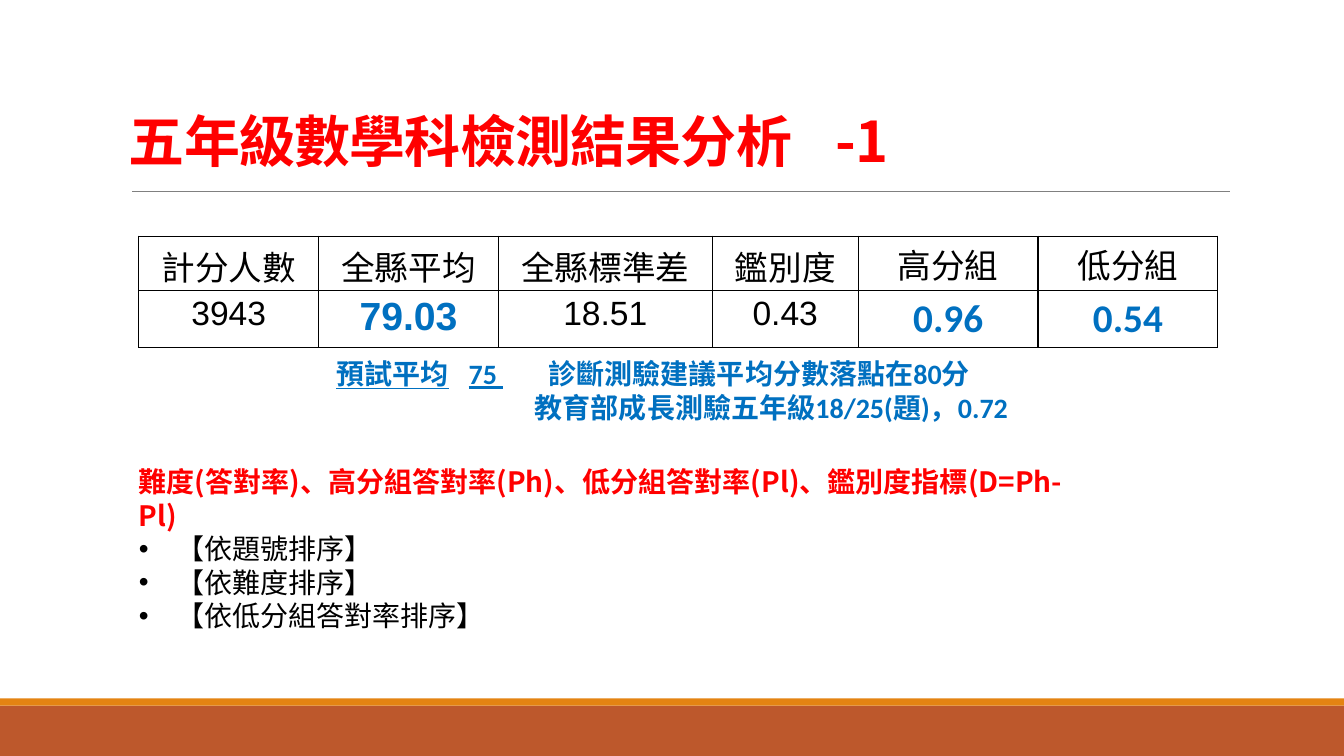
from lxml.etree import SubElement
from pptx import Presentation
from pptx.dml.color import RGBColor
from pptx.enum.shapes import MSO_CONNECTOR, MSO_SHAPE
from pptx.enum.text import MSO_ANCHOR, PP_ALIGN
from pptx.oxml import parse_xml
from pptx.oxml.ns import nsdecls, qn
from pptx.util import Cm, Pt

CJK = "Noto Sans CJK SC"
RED, BLUE, BLACK = "FF0000", "0070C0", "000000"


def style(span, size, face, colour, bold=False):
    font = span.font
    font.size, font.name, font.bold = Pt(size), face, bold
    font.color.rgb = RGBColor.from_string(colour)
    SubElement(font._element, qn("a:ea")).set("typeface", CJK)


def add_tabs(para, *stops):
    tabs = SubElement(para._p.get_or_add_pPr(), qn("a:tabLst"))
    for stop in stops:
        tab = SubElement(tabs, qn("a:tab"))
        tab.set("pos", str(Cm(stop)))
        tab.set("algn", "l")


deck = Presentation()
deck.slide_width, deck.slide_height = Cm(33.87), Cm(19.05)
page = deck.slides.add_slide(deck.slide_layouts[6])

for top, height, colour in [(17.78, 1.27, "BD582C"), (17.6, 0.18, "E48312")]:
    band = page.shapes.add_shape(MSO_SHAPE.RECTANGLE, 0, Cm(top), deck.slide_width, Cm(height))
    band.shadow.inherit = False
    band.fill.solid()
    band.fill.fore_color.rgb = RGBColor.from_string(colour)
    band.line.fill.background()

rule = page.shapes.add_connector(MSO_CONNECTOR.STRAIGHT, Cm(3.33), Cm(4.82), Cm(30.99), Cm(4.82))
rule.line.color.rgb = RGBColor.from_string("808080")
rule.line.width = Pt(0.5)
SubElement(rule._element.spPr, qn("a:effectLst"))

title_box = page.shapes.add_textbox(Cm(3), Cm(0.46), Cm(27.94), Cm(4.04))
title_box.text_frame.word_wrap = True
title_box.text_frame.vertical_anchor = MSO_ANCHOR.BOTTOM
title = title_box.text_frame.paragraphs[0]
title.text = "五年級數學科檢測結果分析\t-1"
title.line_spacing = 0.85
add_tabs(title, 17.8)
for span in title.runs:
    style(span, 40, CJK, RED, True)
    span.font._element.set("spc", "-50")

results = [
    ["計分人數", "全縣平均", "全縣標準差", "鑑別度", "高分組", "低分組"],
    ["3943", "79.03", "18.51", "0.43", "0.96", "0.54"],
]
widths = [4.53, 4.53, 5.39, 3.68, 4.53, 4.53]
table = page.shapes.add_table(2, 6, Cm(3.5), Cm(5.95), Cm(sum(widths)), Cm(2.72)).table
table.first_row = table.horz_banding = False
for column, width in zip(table.columns, widths):
    column.width = Cm(width)
for row, values in enumerate(results):
    for column, value in enumerate(values):
        cell = table.cell(row, column)
        cell.text = value
        group_column = column > 3
        highlighted = row == 1 and column in (1, 4, 5)
        if group_column:
            cell.margin_left = cell.margin_right = cell.margin_top = Cm(0.03)
            cell.margin_bottom = 0
        if group_column or (row == 0 and column < 3):
            cell.vertical_anchor = MSO_ANCHOR.MIDDLE
        para = cell.text_frame.paragraphs[0]
        para.alignment = PP_ALIGN.CENTER
        style(para.runs[0], 28 if highlighted else 24, "Calibri" if group_column else "Arial",
              BLUE if highlighted else BLACK, highlighted)
        cell.fill.background()
        for place, side in enumerate(["lnL", "lnR", "lnT", "lnB"]):
            border = parse_xml(
                f'<a:{side} {nsdecls("a")} w="{Pt(1)}"><a:solidFill>'
                f'<a:srgbClr val="{BLACK}"/></a:solidFill></a:{side}>')
            cell._tc.get_or_add_tcPr().insert(place, border)

index_box = page.shapes.add_textbox(Cm(3.25), Cm(11.58), Cm(24.33), Cm(4.52))
index_box.text_frame.word_wrap = True
index_box.text_frame.text = "\n".join([
    "難度(答對率)、高分組答對率(Ph)、低分組答對率(Pl)、鑑別度指標(D=Ph-Pl)",
    "【依題號排序】", "【依難度排序】", "【依低分組答對率排序】",
])
heading, *orders = index_box.text_frame.paragraphs
style(heading.runs[0], 20, CJK, RED, True)
for para in orders:
    style(para.runs[0], 20, "Calibri", BLACK)
    properties = para._p.get_or_add_pPr()
    properties.set("marL", str(Cm(0.95)))
    properties.set("indent", str(-Cm(0.95)))
    SubElement(properties, qn("a:buFont")).set("typeface", "Arial")
    SubElement(properties, qn("a:buChar")).set("char", "•")

note_box = page.shapes.add_textbox(Cm(8.23), Cm(8.86), Cm(18.42), Cm(1.96))
note_box.text_frame.word_wrap = True
averages = note_box.text_frame.paragraphs[0]
growth = note_box.text_frame.add_paragraph()
add_tabs(averages, 3.33, 5.35)
growth._p.get_or_add_pPr().set("marL", str(Cm(5)))
for para, words, underlined in [
    (averages, "預試平均\t75 ", True),
    (averages, "\t診斷測驗建議平均分數落點在80分", False),
    (growth, "教育部成長測驗五年級18/25(題)，0.72", False),
]:
    span = para.add_run()
    span.text = words
    style(span, 20, "Calibri", BLUE, True)
    span.font.underline = underlined

deck.save("out.pptx")
